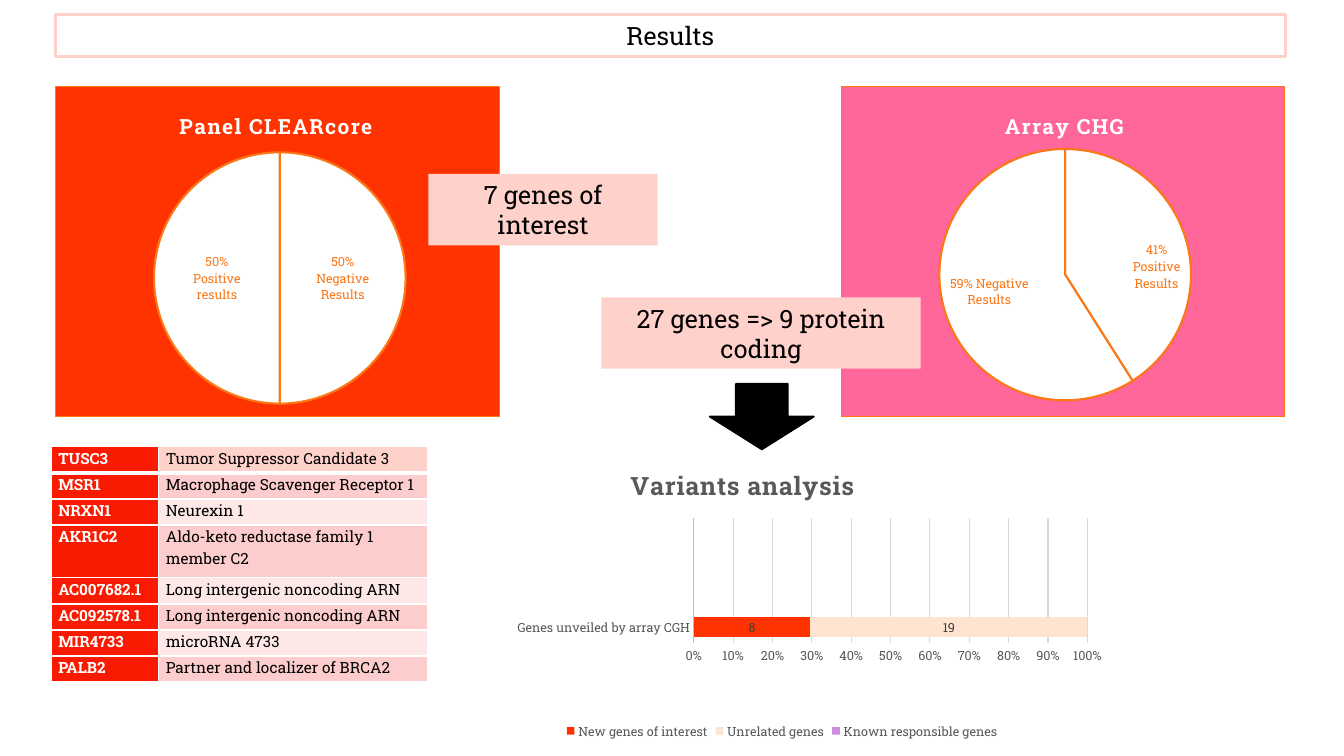
from lxml.etree import SubElement
from pptx import Presentation
from pptx.chart.data import CategoryChartData
from pptx.dml.color import RGBColor
from pptx.enum.chart import XL_CHART_TYPE as ChartType
from pptx.enum.chart import XL_LABEL_POSITION as LabelPosition
from pptx.enum.chart import XL_LEGEND_POSITION as LegendPosition
from pptx.enum.chart import XL_TICK_MARK as TickMark
from pptx.enum.shapes import MSO_SHAPE as Preset
from pptx.enum.text import MSO_ANCHOR as Anchor
from pptx.enum.text import MSO_AUTO_SIZE as AutoSize
from pptx.enum.text import PP_ALIGN as Align
from pptx.oxml.ns import qn
from pptx.util import Inches, Pt

COLUMNS, ROWS = 160, 90
GENES = [
    ("TUSC3", "Tumor Suppressor Candidate 3"),
    ("MSR1", "Macrophage Scavenger Receptor 1"),
    ("NRXN1", "Neurexin 1"),
    ("AKR1C2", "Aldo-keto reductase family 1 member C2"),
    ("AC007682.1", "Long intergenic noncoding ARN"),
    ("AC092578.1", "Long intergenic noncoding ARN"),
    ("MIR4733", "microRNA 4733"),
    ("PALB2", "Partner and localizer of BRCA2"),
]


def color(value):
    return RGBColor.from_string(value)


def set_values(target, values):
    for name, value in values.items():
        setattr(target, name, value)


def paint(fill, value):
    if value:
        fill.solid()
        fill.fore_color.rgb = color(value)
    else:
        fill.background()


def draw_line(line, value, width=0.75):
    paint(line.fill, value)
    if value:
        line.width = Pt(width)


def place_part(part, **shares):
    """Place a title or plot area by shares of its chart."""
    layout = part.find(qn("c:layout"))
    if layout is None:
        layout = part.makeelement(qn("c:layout"))
        part.insert(0, layout)
    manual = SubElement(layout, qn("c:manualLayout"))
    if "w" in shares:
        SubElement(manual, qn("c:layoutTarget"), val="inner")
    for axis in "xy":
        SubElement(manual, qn(f"c:{axis}Mode"), val="edge")
    for name, share in shares.items():
        SubElement(manual, qn(f"c:{name}"), val=str(share))


class ResultsSlide:
    font = "Roboto Slab"
    blush, red, orange, gray = "FFD1CB", "FF3300", "FC7715", "595959"

    def __init__(self, presentation):
        self.unit = presentation.slide_width / COLUMNS
        self.row_unit = presentation.slide_height / ROWS
        self.slide = presentation.slides.add_slide(presentation.slide_layouts[5])

    def box(self, left, top, width, height):
        return [round(left * self.unit), round(top * self.row_unit),
                round(width * self.unit), round(height * self.row_unit)]

    def style(self, font, size, value, bold=False):
        set_values(font, {"name": self.font, "size": Pt(size), "bold": bold})
        font.color.rgb = color(value)

    def center_text(self, shape, text):
        frame = shape.text_frame
        set_values(frame, {"text": text, "word_wrap": True,
                           "auto_size": AutoSize.NONE, "vertical_anchor": Anchor.MIDDLE})
        paragraph = frame.paragraphs[0]
        paragraph.alignment = Align.CENTER
        self.style(paragraph.runs[0].font, 18, "000000")

    def title(self, text, *place):
        shape = self.slide.shapes.title
        set_values(shape, dict(zip(("left", "top", "width", "height"), self.box(*place))))
        draw_line(shape.line, self.blush, 2.25)
        self.center_text(shape, text)

    def shape(self, preset, place, fill, line=None, text=None):
        shape = self.slide.shapes.add_shape(preset, *self.box(*place))
        shape.shadow.inherit = False
        paint(shape.fill, fill)
        draw_line(shape.line, line, 1.25)
        if text:
            self.center_text(shape, text)

    def chart(self, kind, place, categories, series, title, plot):
        data = CategoryChartData()
        data.categories = categories
        for name, values in series:
            data.add_series(name, values)
        chart = self.slide.shapes.add_chart(kind, *self.box(*place), data).chart
        self.style(chart.font, 9, self.gray)
        # Heading
        text, size, value, spacing, left, top = title
        chart.has_title = True
        frame = chart.chart_title.text_frame
        frame.text = text
        run = frame.paragraphs[0].runs[0]
        self.style(run.font, size, value, True)
        run._r.get_or_add_rPr().set("spc", str(spacing))
        place_part(chart.chart_title._element, x=left, y=top)
        place_part(chart._chartSpace.chart.plotArea, **dict(zip("xywh", plot)))
        return chart

    def pie(self, place, fill, title, values, labels, position, plot):
        chart = self.chart(ChartType.PIE, place, ["Analyse positive", "Analyse négative"],
                           [(title[0], values)], title, plot)
        chart.has_legend = False
        chart.plots[0].vary_by_categories = False
        # Panel behind the pie
        body = chart._chartSpace.chart
        corners = body.makeelement(qn("c:roundedCorners"), val="0")
        body.addprevious(corners)
        panel = body.makeelement(qn("c:spPr"))
        body.addnext(panel)
        panel_fill = SubElement(panel, qn("a:solidFill"))
        SubElement(panel_fill, qn("a:srgbClr"), val=fill)
        border = SubElement(panel, qn("a:ln"), w=str(Pt(0.75)))
        border_fill = SubElement(border, qn("a:solidFill"))
        SubElement(border_fill, qn("a:srgbClr"), val=self.orange)
        # Slices and their labels
        for index, label in enumerate(labels):
            point = chart.plots[0].series[0].points[index]
            paint(point.format.fill, "FFFFFF")
            draw_line(point.format.line, self.orange, 1.5)
            frame = point.data_label.text_frame
            frame.text = label
            for paragraph in frame.paragraphs:
                self.style(paragraph.runs[0].font, 9, self.orange)
            point.data_label.position = position

    def stacked_bar(self, place, categories, series, fills, title, plot):
        chart = self.chart(ChartType.BAR_STACKED_100, place, categories, series, title, plot)
        bars = chart.plots[0]
        set_values(bars, {"gap_width": 50, "overlap": 100, "vary_by_categories": False})
        for bar, fill in zip(bars.series, fills):
            paint(bar.format.fill, fill)
            labels = bar.data_labels
            set_values(labels, {"show_value": True, "position": LabelPosition.CENTER})
            self.style(labels.font, 9, "404040")
        last_color = bars.series[-1]._element.find(".//" + qn("a:srgbClr"))
        SubElement(last_color, qn("a:alpha"), val="70000")
        # Axes and legend
        for axis, line in ((chart.category_axis, "BFBFBF"), (chart.value_axis, None)):
            set_values(axis, {"major_tick_mark": TickMark.NONE, "minor_tick_mark": TickMark.NONE})
            draw_line(axis.format.line, line)
            self.style(axis.tick_labels.font, 9, self.gray)
        set_values(chart.value_axis, {"has_major_gridlines": True, "major_unit": 0.1})
        draw_line(chart.value_axis.major_gridlines.format.line, "D9D9D9")
        set_values(chart.value_axis.tick_labels,
                   {"number_format": "0%", "number_format_is_linked": False})
        chart.has_legend = True
        set_values(chart.legend, {"position": LegendPosition.BOTTOM, "include_in_layout": False})
        self.style(chart.legend.font, 9, self.gray)

    def table(self, left, top, widths, heights, rows):
        place = self.box(left, top, sum(widths), sum(heights))
        table = self.slide.shapes.add_table(len(rows), len(widths), *place).table
        for column, width in zip(table.columns, widths):
            column.width = round(width * self.unit)
        for index, (row, height) in enumerate(zip(rows, heights)):
            table.rows[index].height = round(height * self.row_unit)
            band = ("FCCDCC" if index % 2 else "FEE8E7") if index else self.blush
            looks = (("F81B02", "FFFFFF", True), (band, "000000", False))
            for cell, text, (fill, value, bold) in zip(table.rows[index].cells, row, looks):
                set_values(cell, {"text": text, "margin_left": Inches(0.07), "margin_top": 0,
                                  "margin_right": Inches(0.07), "margin_bottom": 0})
                paragraph = cell.text_frame.paragraphs[0]
                paragraph.line_spacing = 1.07
                self.style(paragraph.runs[0].font, 11, value, bold)
                # Borders come before the fill in the cell properties
                properties = cell._tc.get_or_add_tcPr()
                for side in "LRTB":
                    thick = (index, side) in ((0, "B"), (1, "T"))
                    border = SubElement(properties, qn(f"a:ln{side}"), w=str(Pt(3 if thick else 1)))
                    SubElement(SubElement(border, qn("a:solidFill")), qn("a:srgbClr"), val="FFFFFF")
                paint(cell.fill, fill)


def main():
    presentation = Presentation()
    set_values(presentation, {"slide_width": Inches(13.33), "slide_height": Inches(7.5)})
    page = ResultsSlide(presentation)
    page.title("Results", 6.6, 1.7, 146.4, 5)

    # Share of positive and negative results
    page.pie((100.1, 10.2, 52.9, 39.5), "FF6699", ("Array CHG", 15, "FFFFFF", 100, 0.36, 0.06),
             (41, 59), ("41%\nPositive\nResults", "59% Negative\nResults"),
             LabelPosition.INSIDE_END, (0.22, 0.19, 0.57, 0.76))
    page.pie((6.6, 10.2, 52.9, 39.5), page.red, ("Panel CLEARcore", 15, "FFFFFF", 100, 0.27, 0.06),
             (50, 50), ("50%\nNegative\nResults", "50%\nPositive\nresults"),
             LabelPosition.CENTER, (0.22, 0.2, 0.57, 0.76))

    # Gene counts and the arrow to the analysis
    page.shape(Preset.RECTANGLE, (51, 20.7, 27.3, 8.5), page.blush, text="7 genes of interest")
    page.shape(Preset.RECTANGLE, (71.6, 35.4, 38, 8.5), page.blush,
               text="27 genes => 9 protein coding")
    page.shape(Preset.DOWN_ARROW, (84.5, 45.7, 12.4, 7.8), "000000", "000000")

    # Variants analysis, with three unused category slots above the bar
    page.stacked_bar((52.7, 53.2, 80.8, 35.3), ["Genes unveiled by array CGH", "", "", ""],
                     [("New genes of interest", (8, None, None, None)),
                      ("Unrelated genes", (19, None, None, None)),
                      ("Known responsible genes", (None,) * 4)],
                     (page.red, "FEE4D0", "B560D4"),
                     ("Variants analysis", 18, page.gray, 50, 0.27, 0.05),
                     (0.37, 0.24, 0.58, 0.42))

    # Genes of interest
    heights = [6.3 if gene == "AKR1C2" else 3.1 for gene, _ in GENES]
    page.table(6.1, 53.2, (12.8, 32), heights, GENES)
    presentation.save("out.pptx")


if __name__ == "__main__":
    main()
